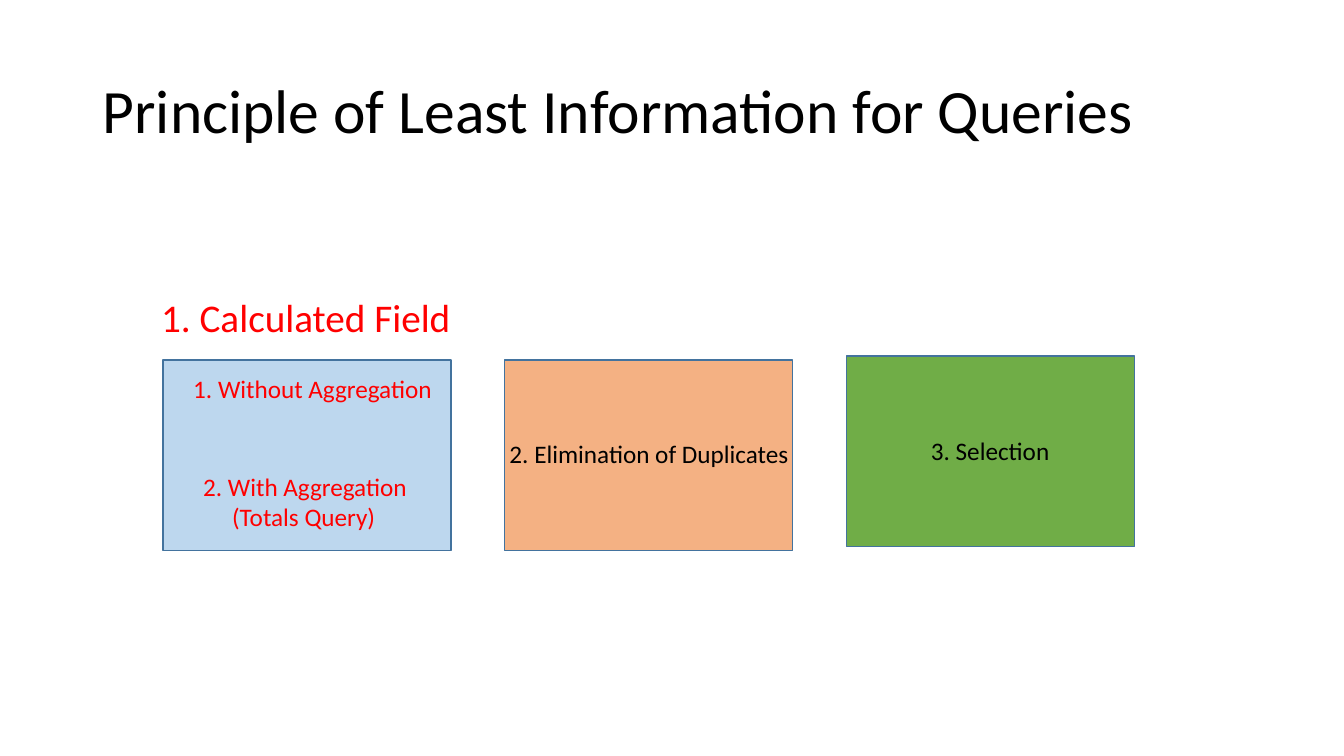
from pptx import Presentation
from pptx.dml.color import RGBColor
from pptx.enum import shapes, text
from pptx.util import Cm, Pt

BLACK = RGBColor(0x00, 0x00, 0x00)
RED = RGBColor(0xFF, 0x00, 0x00)
OUTLINE = RGBColor(0x43, 0x73, 0x9E)
PALE_BLUE = RGBColor(0xBD, 0xD7, 0xEE)
ORANGE = RGBColor(0xF4, 0xB1, 0x83)
GREEN = RGBColor(0x70, 0xAD, 0x47)

STEP_WIDTH, STEP_HEIGHT = 7.26, 4.8
STEP_LEFT, STEP_PITCH = 4.11, 8.61

# Each step: top, fill, text colour, labels (dx, dy, width, height, lines);
# each line is its wording and its indent.
STEPS = [
    (9.07, PALE_BLUE, RED, [
        (0.51, 0.2, 6.6, 1.8, [("1. Without Aggregation", 0)]),
        (0.76, 2.67, 5.72, 1.8, [("2. With Aggregation", 0),
                                 ("(Totals Query)", 0.73)]),
    ]),
    (9.07, ORANGE, BLACK, [
        (-0.13, 1.85, 7.62, 1.02, [("2. Elimination of Duplicates", 0)]),
    ]),
    (8.97, GREEN, BLACK, [
        (1.88, 1.88, 3.53, 1.02, [("3. Selection", 0)]),
    ]),
]


def add_label(slide, box, lines, size, color, wrap=False):
    label = slide.shapes.add_textbox(*(Cm(length) for length in box))
    frame = label.text_frame
    frame.word_wrap = wrap
    for number, (wording, indent) in enumerate(lines):
        paragraph = frame.add_paragraph() if number else frame.paragraphs[0]
        if indent:
            paragraph._p.get_or_add_pPr().set("marL", str(Cm(indent)))
        run = paragraph.add_run()
        run.text = wording
        run.font.name = "Calibri"
        run.font.size = Pt(size)
        run.font.color.rgb = color
    return frame


def add_title(slide, box):
    title = add_label(slide, box,
                      [("Principle of Least Information for Queries", 0)],
                      44, BLACK, wrap=True)
    title.vertical_anchor = text.MSO_ANCHOR.MIDDLE
    title.paragraphs[0].line_spacing = 0.9


def add_step(slide, left, top, fill, color, labels):
    """Draw one coloured step with its labels placed from its top left corner."""
    step = slide.shapes.add_shape(shapes.MSO_SHAPE.RECTANGLE, Cm(left), Cm(top),
                                  Cm(STEP_WIDTH), Cm(STEP_HEIGHT))
    step.shadow.inherit = False
    step.fill.solid()
    step.fill.fore_color.rgb = fill
    step.line.color.rgb = OUTLINE
    step.line.width = Pt(1)
    for dx, dy, width, height, lines in labels:
        add_label(slide, (left + dx, top + dy, width, height), lines, 18, color)


def main():
    deck = Presentation()
    deck.slide_width, deck.slide_height = Cm(33.87), Cm(19.05)
    slide = deck.slides.add_slide(deck.slide_layouts[6])
    add_title(slide, (2.34, 1.02, 29.21, 3.68))
    add_label(slide, (3.81, 7.26, 7.87, 1.45), [("1. Calculated Field", 0)], 28, RED)
    for column, step in enumerate(STEPS):
        add_step(slide, STEP_LEFT + column * STEP_PITCH, *step)
    deck.save("out.pptx")


if __name__ == "__main__":
    main()
